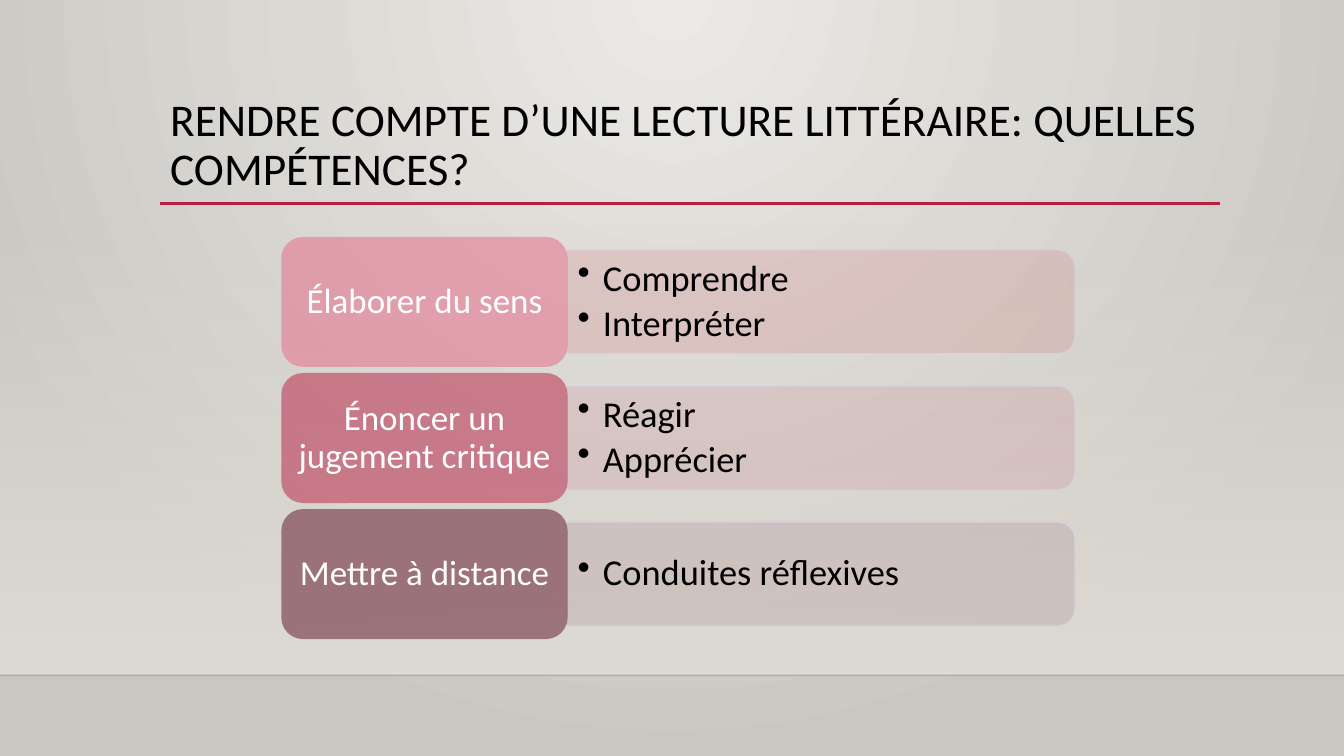
from lxml import etree
from pptx import Presentation
from pptx.dml.color import RGBColor
from pptx.enum.shapes import MSO_CONNECTOR as Connector, MSO_SHAPE as Shape
from pptx.enum.text import MSO_ANCHOR as Anchor, PP_ALIGN as Align
from pptx.oxml import parse_xml
from pptx.oxml.ns import nsdecls, qn
from pptx.util import Inches, Pt

FONT = "Calibri"
BLACK = RGBColor(0x00, 0x00, 0x00)
WHITE = RGBColor(0xFF, 0xFF, 0xFF)
CRIMSON = RGBColor(0xB7, 0x1E, 0x42)
PINK = RGBColor(0xE6, 0x66, 0x84)
RED = RGBColor(0xC0, 0x00, 0x00)
WINE = RGBColor(0x5C, 0x0F, 0x21)
LILAC = RGBColor(0xD7, 0xD2, 0xE3)
SAND = RGBColor(0xDF, 0xDB, 0xD5)
PALE_GREY = RGBColor(0xEC, 0xEA, 0xE7)
WARM_GREY = RGBColor(0xCA, 0xC7, 0xC1)

TITLE = "RENDRE COMPTE D’UNE LECTURE LITTÉRAIRE: QUELLES COMPÉTENCES?"
# label, label colour, panel colour, skills
ROWS = [
    ("Élaborer du sens", PINK, RED, ["Comprendre", "Interpréter"]),
    ("Énoncer un jugement critique", CRIMSON, CRIMSON, ["Réagir", "Apprécier"]),
    ("Mettre à distance", WINE, WINE, ["Conduites réflexives"]),
]
FIRST_ROW_TOP, ROW_STEP = 2.35, 1.35
LABEL_LEFT, LABEL_WIDTH, LABEL_HEIGHT = 2.79, 2.84, 1.29
PANEL_LEFT, PANEL_LENGTH, PANEL_HEIGHT = 5.62, 5.04, 1.03


def set_opacity(fill, percent):
    color = fill._xPr.find(qn("a:solidFill"))[0]
    etree.SubElement(color, qn("a:alpha")).set("val", str(percent * 1000))


def set_gradient(properties, stops, direction):
    """Replace a solid fill; stops are (position, colour, opacity) in percent."""
    stop_xml = "".join(
        f'<a:gs pos="{position * 1000}"><a:srgbClr val="{color}">'
        f'<a:alpha val="{opacity * 1000}"/></a:srgbClr></a:gs>'
        for position, color, opacity in stops
    )
    gradient = parse_xml(
        f'<a:gradFill {nsdecls("a")} rotWithShape="1">'
        f"<a:gsLst>{stop_xml}</a:gsLst>{direction}</a:gradFill>"
    )
    properties.replace(properties.find(qn("a:solidFill")), gradient)


def paint_background(slide):
    slide.background.fill.solid()
    set_gradient(
        slide.element.find(".//" + qn("p:bgPr")),
        [(0, PALE_GREY, 100), (100, WARM_GREY, 100)],
        '<a:path path="circle">'
        '<a:fillToRect l="43000" t="0" r="43000" b="100000"/></a:path>',
    )


def add_filled_shape(slide, kind, left, top, width, height, color):
    shape = slide.shapes.add_shape(
        kind, Inches(left), Inches(top), Inches(width), Inches(height)
    )
    shape.shadow.inherit = False
    shape.fill.solid()
    shape.fill.fore_color.rgb = color
    shape.line.fill.background()
    return shape


def add_wall(slide):
    wall = add_filled_shape(slide, Shape.RECTANGLE, 0, 2.21, 13.33, 4.49, SAND)
    set_gradient(
        wall.element.spPr, [(0, SAND, 0), (100, SAND, 100)], '<a:lin ang="5400000"/>'
    )


def add_rule(slide, left, right, top, color, weight, opacity=100):
    rule = slide.shapes.add_connector(
        Connector.STRAIGHT, Inches(left), Inches(top), Inches(right), Inches(top)
    )
    rule.line.color.rgb = color
    rule.line.width = Pt(weight)
    set_opacity(rule.line.fill, opacity)
    etree.SubElement(rule.element.spPr, qn("a:effectLst"))


def set_up_frame(shape, side_inset):
    frame = shape.text_frame
    frame.word_wrap = True
    frame.vertical_anchor = Anchor.MIDDLE
    frame.margin_left = frame.margin_right = Inches(side_inset)
    frame.margin_top = frame.margin_bottom = Inches(0.05)
    return frame


def add_text_box(slide, left, top, width, height, side_inset):
    box = slide.shapes.add_textbox(
        Inches(left), Inches(top), Inches(width), Inches(height)
    )
    return set_up_frame(box, side_inset)


def write(para, text, size, color, align=Align.LEFT):
    para.alignment = align
    para.line_spacing = 0.9
    span = para.add_run()
    span.text = text
    span.font.name = FONT
    span.font.size = Pt(size)
    span.font.color.rgb = color


def add_bullet(para):
    properties = para._p.get_or_add_pPr()
    properties.set("marL", str(Inches(0.25)))
    properties.set("indent", str(Inches(-0.25)))
    etree.SubElement(properties, qn("a:buChar")).set("char", "•")


def add_panel(slide, middle, color):
    """Draw the upright shape and turn it so its rounded end faces right."""
    center = PANEL_LEFT + PANEL_LENGTH / 2
    panel = add_filled_shape(
        slide, Shape.ROUND_2_SAME_RECTANGLE,
        center - PANEL_HEIGHT / 2, middle - PANEL_LENGTH / 2,
        PANEL_HEIGHT, PANEL_LENGTH, color,
    )
    panel.rotation = 90
    set_opacity(panel.fill, 10)
    panel.line.color.rgb = LILAC
    panel.line.width = Pt(0.75)
    set_opacity(panel.line.fill, 90)


def add_skills(slide, middle, skills):
    height = 0.93
    frame = add_text_box(slide, PANEL_LEFT, middle - height / 2, 4.99, height, 0.11)
    for index, skill in enumerate(skills):
        para = frame.add_paragraph() if index else frame.paragraphs[0]
        para.level = 1
        add_bullet(para)
        para.space_after = Pt(4)
        write(para, skill, 26, BLACK)


def add_label(slide, top, text, color):
    label = add_filled_shape(
        slide, Shape.ROUNDED_RECTANGLE,
        LABEL_LEFT, top, LABEL_WIDTH, LABEL_HEIGHT, color,
    )
    set_opacity(label.fill, 50)
    frame = set_up_frame(label, 0.1)
    write(frame.paragraphs[0], text, 25, WHITE, Align.CENTER)


def main():
    deck = Presentation()
    deck.slide_width, deck.slide_height = Inches(13.33), Inches(7.5)
    slide = deck.slides.add_slide(deck.slide_layouts[6])
    paint_background(slide)
    add_wall(slide)
    add_rule(slide, 0, 13.33, 6.7, BLACK, 1, opacity=20)
    add_rule(slide, 1.59, 12.1, 2.02, CRIMSON, 2.5)

    title = add_text_box(slide, 1.59, 0.88, 10.5, 1.15, 0.1)
    write(title.paragraphs[0], TITLE, 32.4, BLACK)

    for index, (text, label_color, panel_color, skills) in enumerate(ROWS):
        top = FIRST_ROW_TOP + index * ROW_STEP
        middle = top + LABEL_HEIGHT / 2
        add_panel(slide, middle, panel_color)
        add_skills(slide, middle, skills)
        add_label(slide, top, text, label_color)

    deck.save("out.pptx")


if __name__ == "__main__":
    main()
